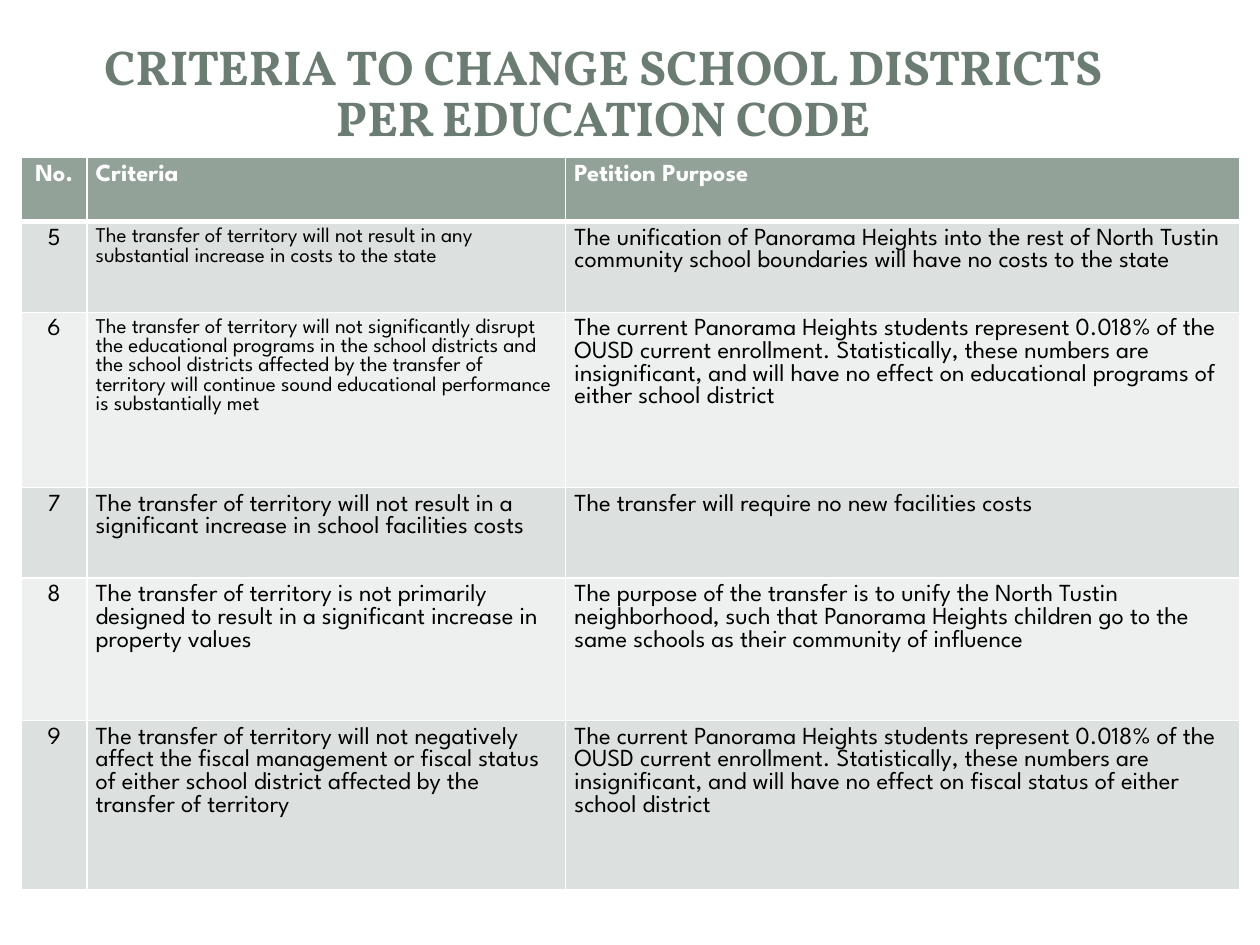
from dataclasses import dataclass

from lxml.etree import SubElement
from pptx import Presentation
from pptx.dml.color import RGBColor
from pptx.enum.text import MSO_ANCHOR as Anchor, PP_ALIGN as Align
from pptx.oxml.ns import qn
from pptx.util import Inches, Pt


@dataclass(frozen=True)
class Theme:
    title_font: str = "Vollkorn"
    body_font: str = "League Spartan"
    title_color: str = "6B7D72"
    header_fill: str = "93A299"
    band_fills: tuple = ("DCE0DE", "EEF0EF")
    header_text: str = "FFFFFF"
    body_text: str = "000000"
    border: str = "FFFFFF"
    title_size: int = 28
    body_size: int = 14
    small_size: int = 12


TITLE = "CRITERIA TO CHANGE SCHOOL DISTRICTS PER EDUCATION CODE"
HEADER = ("No.", "Criteria", "Petition Purpose")
CRITERIA = [
    ("5", "The transfer of territory will not result in any substantial increase "
          "in costs to the state",
     "The unification of Panorama Heights into the rest of North Tustin community "
     "school boundaries will have no costs to the state"),
    ("6", "The transfer of territory will not significantly disrupt the educational "
          "programs in the school districts and the school districts affected by the "
          "transfer of territory will continue sound educational performance is "
          "substantially met",
     "The current Panorama Heights students represent 0.018% of the OUSD current "
     "enrollment. Statistically, these numbers are insignificant, and will have no "
     "effect on educational programs of either school district"),
    ("7", "The transfer of territory will not result in a significant increase in "
          "school facilities costs",
     "The transfer will require no new facilities costs"),
    ("8", "The transfer of territory is not primarily designed to result in a "
          "significant increase in property values",
     "The purpose of the transfer is to unify the North Tustin neighborhood, such "
     "that Panorama Heights children go to the same schools as their community of "
     "influence"),
    ("9", "The transfer of territory will not negatively affect the fiscal management "
          "or fiscal status of either school district affected by the transfer of "
          "territory",
     "The current Panorama Heights students represent 0.018% of the OUSD current "
     "enrollment. Statistically, these numbers are insignificant, and will have no "
     "effect on fiscal status of either school district"),
]
SMALL_CRITERIA = ("5", "6")
COLUMN_WIDTHS = (0.52, 3.8, 5.35)
ROW_HEIGHTS = (0.51, 0.72, 1.39, 0.72, 1.13, 1.34)


class SlideBuilder:
    def __init__(self, slide, theme):
        self.slide = slide
        self.theme = theme

    def style(self, paragraph, font_name, size, color, bold, align):
        paragraph.alignment = align
        font = paragraph.font
        font.name, font.size, font.bold = font_name, Pt(size), bold
        font.color.rgb = RGBColor.from_string(color)

    def title(self, text, left, top, width, height):
        shape = self.slide.shapes.title
        shape.left, shape.top = Inches(left), Inches(top)
        shape.width, shape.height = Inches(width), Inches(height)
        frame = shape.text_frame
        frame.text = text
        frame.word_wrap = True
        frame.vertical_anchor = Anchor.MIDDLE
        paragraph = frame.paragraphs[0]
        paragraph.line_spacing = 0.87
        self.style(paragraph, self.theme.title_font, self.theme.title_size,
                   self.theme.title_color, True, Align.CENTER)

    def borders(self, cell, top, bottom):
        """Draw all four edges; the schema wants them ahead of the cell's fill."""
        properties = cell._tc.get_or_add_tcPr()
        for edge, width in (("L", 1), ("R", 1), ("T", top), ("B", bottom)):
            line = SubElement(properties, qn(f"a:ln{edge}"), w=str(Pt(width)))
            fill = SubElement(line, qn("a:solidFill"))
            SubElement(fill, qn("a:srgbClr"), val=self.theme.border)

    def cell(self, cell, text, row, column, size):
        theme = self.theme
        is_header = row == 0
        self.borders(cell, top=3 if row == 1 else 1, bottom=3 if is_header else 1)
        cell.fill.solid()
        fill = theme.header_fill if is_header else theme.band_fills[(row - 1) % 2]
        cell.fill.fore_color.rgb = RGBColor.from_string(fill)
        cell.margin_left = cell.margin_right = Inches(0.07)
        cell.margin_top = cell.margin_bottom = Inches(0.05)
        cell.text = text
        self.style(cell.text_frame.paragraphs[0], theme.body_font, size,
                   theme.header_text if is_header else theme.body_text,
                   is_header, Align.CENTER if column == 0 else Align.LEFT)

    def criteria_table(self, rows, left, top):
        table = self.slide.shapes.add_table(
            len(rows), len(COLUMN_WIDTHS), Inches(left), Inches(top),
            Inches(sum(COLUMN_WIDTHS)), Inches(sum(ROW_HEIGHTS))).table
        for column, width in zip(table.columns, COLUMN_WIDTHS):
            column.width = Inches(width)
        for row, height in zip(table.rows, ROW_HEIGHTS):
            row.height = Inches(height)
        for row, texts in enumerate(rows):
            for column, text in enumerate(texts):
                small = column == 1 and texts[0] in SMALL_CRITERIA
                size = self.theme.small_size if small else self.theme.body_size
                self.cell(table.cell(row, column), text, row, column, size)


def main():
    presentation = Presentation()
    presentation.slide_width, presentation.slide_height = Inches(10), Inches(7.5)
    title_only = presentation.slide_layouts[5]
    builder = SlideBuilder(presentation.slides.add_slide(title_only), Theme())
    builder.title(TITLE, 0.67, 0.17, 8.23, 1.18)
    builder.criteria_table([HEADER, *CRITERIA], 0.17, 1.25)
    presentation.save("out.pptx")


if __name__ == "__main__":
    main()
